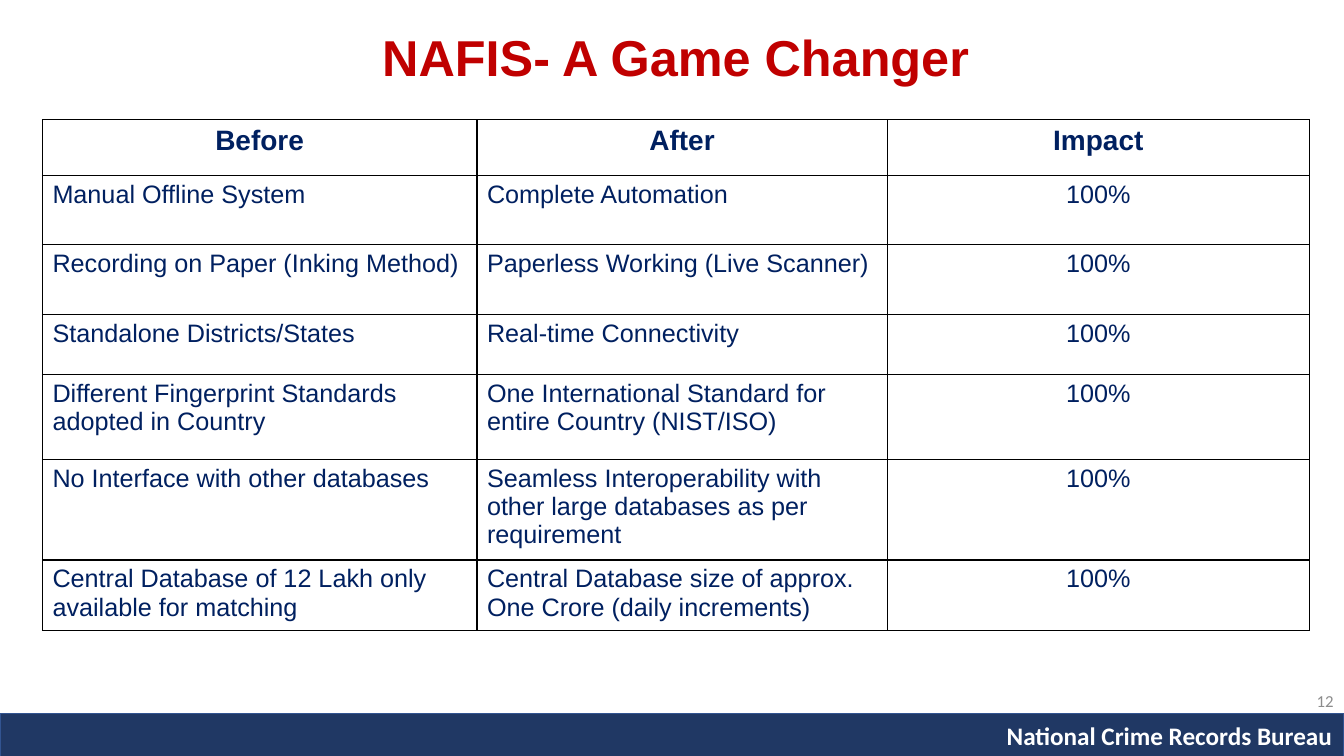
from lxml import etree
from pptx import Presentation
from pptx.dml.color import RGBColor
from pptx.enum import shapes, text
from pptx.oxml import ns
from pptx.util import Cm, Pt

# Content
TITLE = "NAFIS- A Game Changer"
BUREAU = "National Crime Records Bureau"
PAGE = "12"
HEAD = ("Before", "After", "Impact")
CHANGES = [
    ("Manual Offline System", "Complete Automation"),
    ("Recording on Paper (Inking Method)", "Paperless Working (Live Scanner)"),
    ("Standalone Districts/States", "Real-time Connectivity"),
    ("Different Fingerprint Standards adopted in Country",
     "One International Standard for entire Country (NIST/ISO)"),
    ("No Interface with other databases",
     "Seamless Interoperability with other large databases as per requirement"),
    ("Central Database of 12 Lakh only available for matching",
     "Central Database size of approx. One Crore (daily increments)"),
]
IMPACT = "100%"
ROWS = [HEAD] + [(old, new, IMPACT) for old, new in CHANGES]

# Theme and sizes in centimetres
THEME = {
    "title": ("Arial", 36, "C00000", True),
    "head": ("Arial", 20, "002060", True),
    "body": ("Arial", 18, "002060", False),
    "bureau": ("Calibri", 18, "FFFFFF", True),
    "page": ("Calibri", 12, "8C8C8C", False),
    "band": "203864", "edge": "325491", "cell": "FFFFFF", "rule": "000000",
}
WIDE, HIGH = 33.87, 19.05
BAND_TOP, BAND_HIGH = 17.98, 1.14
COLS = (10.95, 10.34, 10.64)
HEIGHTS = (1.4, 1.75, 1.75, 1.52, 2.13, 2.39, 1.75)
LEFT, CENTER, RIGHT = text.PP_ALIGN.LEFT, text.PP_ALIGN.CENTER, text.PP_ALIGN.RIGHT


def color(key):
    return RGBColor.from_string(THEME[key])


def write(frame, words, role, align):
    frame.text = words
    par = frame.paragraphs[0]
    par.alignment = align
    font = par.runs[0].font
    font.name, size, tint, font.bold = THEME[role]
    font.size = Pt(size)
    font.color.rgb = RGBColor.from_string(tint)
    return par


def label(slide, box, words, role, align, wrap=True, anchor=text.MSO_ANCHOR.MIDDLE):
    frame = slide.shapes.add_textbox(*map(Cm, box)).text_frame
    frame.word_wrap = wrap
    frame.vertical_anchor = anchor
    return write(frame, words, role, align)


def border(cell):
    props = cell._tc.get_or_add_tcPr()
    for side in ("lnL", "lnR", "lnT", "lnB"):
        line = etree.SubElement(props, ns.qn("a:" + side), w=str(Pt(1)))
        fill = etree.SubElement(line, ns.qn("a:solidFill"))
        etree.SubElement(fill, ns.qn("a:srgbClr"), val=THEME["rule"])


def main():
    deck = Presentation()
    deck.slide_width, deck.slide_height = Cm(WIDE), Cm(HIGH)
    slide = deck.slides.add_slide(deck.slide_layouts[6])

    # Footer band
    band = slide.shapes.add_shape(shapes.MSO_SHAPE.RECTANGLE, 0, Cm(BAND_TOP),
                                  Cm(WIDE), Cm(BAND_HIGH))
    band.shadow.inherit = False
    band.fill.solid()
    band.fill.fore_color.rgb = color("band")
    band.line.color.rgb = color("edge")
    band.line.width = Pt(1)
    label(slide, (25.12, 18.03, 8.79, 1.02), BUREAU, "bureau", LEFT,
          wrap=False, anchor=text.MSO_ANCHOR.TOP)

    # Title
    title = label(slide, (3.48, 0.5, 27.1, 2.03), TITLE, "title", CENTER)
    title.line_spacing = 0.9

    # Comparison table
    table = slide.shapes.add_table(len(ROWS), len(COLS), Cm(1.07), Cm(3.02),
                                   Cm(sum(COLS)), Cm(sum(HEIGHTS))).table
    table.first_row = table.horz_banding = False
    for col, width in zip(table.columns, COLS):
        col.width = Cm(width)
    for r, (row, height) in enumerate(zip(ROWS, HEIGHTS)):
        table.rows[r].height = Cm(height)
        for c, words in enumerate(row):
            cell = table.cell(r, c)
            border(cell)
            cell.fill.solid()
            cell.fill.fore_color.rgb = color("cell")
            write(cell.text_frame, words, "body" if r else "head",
                  LEFT if r and c < 2 else CENTER)

    # Page number
    label(slide, (26.24, 17.15, 7.62, 1.02), PAGE, "page", RIGHT)
    deck.save("out.pptx")


if __name__ == "__main__":
    main()
